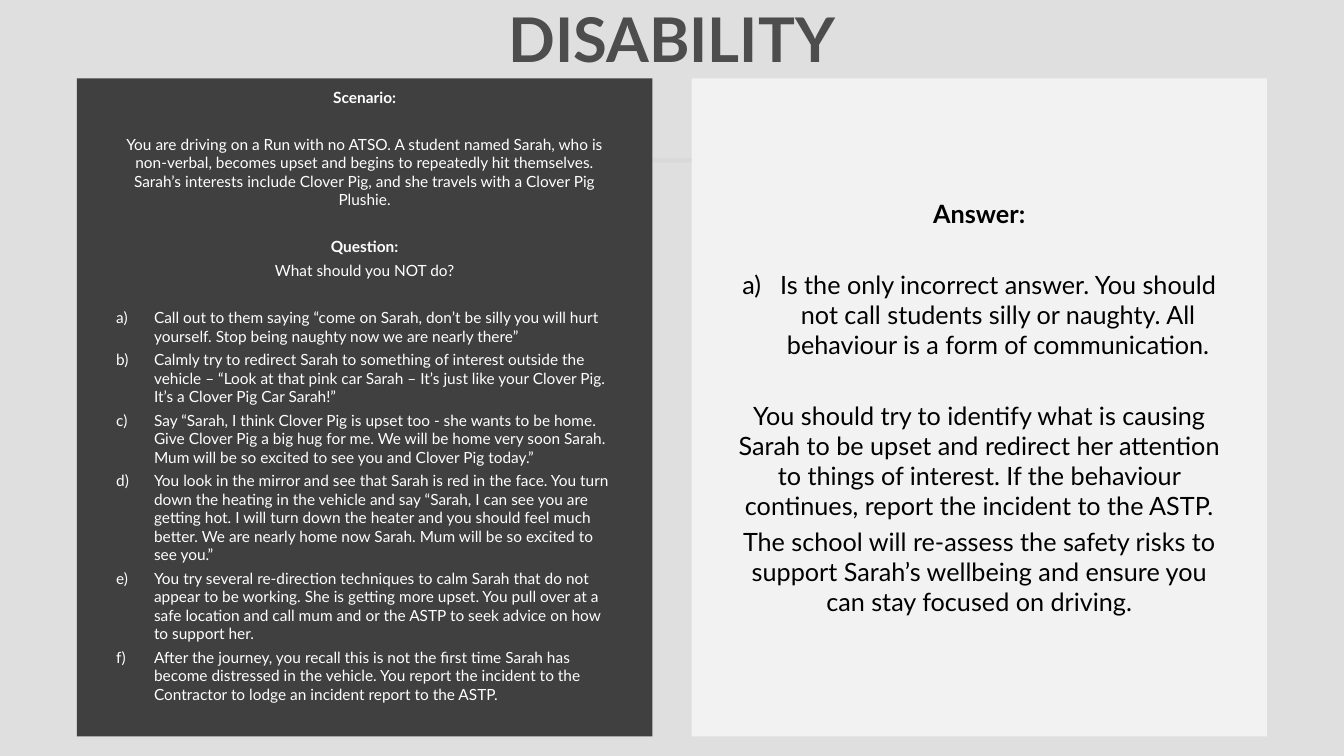
from dataclasses import dataclass

import pptx
import pptx.dml.color
import pptx.enum.shapes
import pptx.enum.text
import pptx.oxml.ns
import pptx.util
from lxml import etree

Pt = pptx.util.Pt
Align = pptx.enum.text.PP_ALIGN
Anchor = pptx.enum.text.MSO_ANCHOR


@dataclass(frozen=True)
class Theme:
    font: str = "Lato"
    background: str = "DFDFDF"
    rule: str = "D9D9D9"
    title: str = "4D4D4D"
    dark: str = "404040"
    light: str = "F2F2F2"
    on_dark: str = "FFFFFF"
    on_light: str = "000000"
    title_size: float = 44
    scenario_size: float = 11
    answer_size: float = 18
    line_height: float = 1.2
    space: float = 3.6
    list_indent: float = 27


THEME = Theme()
PANEL_TOP, PANEL_WIDTH, PANEL_HEIGHT = 56, 411, 470
SCENARIO_LEFT, ANSWER_LEFT = 55, 494

SCENARIO = (
    "You are driving on a Run with no ATSO. A student named Sarah, who is non-verbal, "
    "becomes upset and begins to repeatedly hit themselves. Sarah’s interests include "
    "Clover Pig, and she travels with a Clover Pig Plushie."
)
OPTIONS = [
    "Call out to them saying “come on Sarah, don’t be silly you will hurt yourself. "
    "Stop being naughty now we are nearly there”",
    "Calmly try to redirect Sarah to something of interest outside the vehicle – “Look at "
    "that pink car Sarah – It’s just like your Clover Pig. It’s a Clover Pig Car Sarah!”",
    "Say “Sarah, I think Clover Pig is upset too - she wants to be home. Give Clover Pig a "
    "big hug for me. We will be home very soon Sarah. Mum will be so excited to see you "
    "and Clover Pig today.”",
    "You look in the mirror and see that Sarah is red in the face. You turn down the "
    "heating in the vehicle and say “Sarah, I can see you are getting hot. I will turn "
    "down the heater and you should feel much better. We are nearly home now Sarah. Mum "
    "will be so excited to see you.”",
    "You try several re-direction techniques to calm Sarah that do not appear to be "
    "working. She is getting more upset. You pull over at a safe location and call mum "
    "and or the ASTP to seek advice on how to support her.",
    "After the journey, you recall this is not the first time Sarah has become distressed "
    "in the vehicle. You report the incident to the Contractor to lodge an incident "
    "report to the ASTP.",
]
ANSWER = (
    "Is the only incorrect answer. You should not call students silly or naughty. "
    "All behaviour is a form of communication."
)
ADVICE = (
    "You should try to identify what is causing Sarah to be upset and redirect her "
    "attention to things of interest. If the behaviour continues, report the incident "
    "to the ASTP."
)
FOLLOW_UP = (
    "The school will re-assess the safety risks to support Sarah’s wellbeing and ensure "
    "you can stay focused on driving."
)


def rgb(color):
    return pptx.dml.color.RGBColor.from_string(color)


def add_span(para, text, size, color, bold=False):
    span = para.add_run()
    span.text = text
    span.font.name = THEME.font
    span.font.size = Pt(size)
    span.font.bold = bold
    span.font.color.rgb = rgb(color)


def add_rectangle(page, left, top, width, height, fill):
    box = page.shapes.add_shape(
        pptx.enum.shapes.MSO_SHAPE.RECTANGLE, Pt(left), Pt(top), Pt(width), Pt(height)
    )
    box.shadow.inherit = False
    box.fill.solid()
    box.fill.fore_color.rgb = rgb(fill)
    box.line.fill.background()
    return box


def add_title(page, text):
    box = page.shapes.add_textbox(Pt(SCENARIO_LEFT), Pt(0), Pt(850), Pt(57))
    frame = box.text_frame
    frame.word_wrap = True
    frame.vertical_anchor = Anchor.BOTTOM
    para = frame.paragraphs[0]
    para.alignment = Align.CENTER
    para.line_spacing = Pt(48.8)
    add_span(para, text, THEME.title_size, THEME.title, bold=True)


def add_panel(page, left, fill, margin_top, margin_bottom):
    """Add a filled panel and return its text frame."""
    box = add_rectangle(page, left, PANEL_TOP, PANEL_WIDTH, PANEL_HEIGHT, fill)
    frame = box.text_frame
    frame.word_wrap = True
    frame.vertical_anchor = Anchor.MIDDLE
    frame.margin_left = frame.margin_right = Pt(28)
    frame.margin_top, frame.margin_bottom = Pt(margin_top), Pt(margin_bottom)
    return frame


def letter_paragraph(para):
    """Give a paragraph a hanging a), b), c) label."""
    properties = para._p.get_or_add_pPr()
    properties.set("marL", str(Pt(THEME.list_indent)))
    properties.set("indent", str(-Pt(THEME.list_indent)))
    label = etree.SubElement(properties, pptx.oxml.ns.qn("a:buAutoNum"))
    label.set("type", "alphaLcParenR")


def add_paragraph(frame, text, size, color, bold=False, gap=False,
                  lettered=False, align=Align.CENTER):
    """Add a paragraph; gap leaves one line free above it."""
    first = frame.paragraphs[0]
    para = frame.add_paragraph() if first.runs else first
    para.alignment = align
    free_line = size * THEME.line_height + THEME.space if gap else 0
    para.space_before = Pt(THEME.space + free_line)
    if lettered:
        letter_paragraph(para)
    add_span(para, text, size, color, bold)


def add_scenario(page):
    frame = add_panel(page, SCENARIO_LEFT, THEME.dark, 7, 24)
    style = (THEME.scenario_size, THEME.on_dark)
    add_paragraph(frame, "Scenario:", *style, bold=True)
    add_paragraph(frame, SCENARIO, *style, gap=True)
    add_paragraph(frame, "Question:", *style, bold=True, gap=True)
    add_paragraph(frame, "What should you NOT do?", *style)
    for index, option in enumerate(OPTIONS):
        add_paragraph(frame, option, *style, gap=index == 0, lettered=True, align=Align.LEFT)


def add_answer(page):
    frame = add_panel(page, ANSWER_LEFT, THEME.light, 28, 28)
    style = (THEME.answer_size, THEME.on_light)
    add_paragraph(frame, "Answer:", *style, bold=True)
    add_paragraph(frame, ANSWER, *style, gap=True, lettered=True)
    add_paragraph(frame, ADVICE, *style, gap=True)
    add_paragraph(frame, FOLLOW_UP, *style)


def main():
    deck = pptx.Presentation()
    deck.slide_width, deck.slide_height = Pt(960), Pt(540)
    page = deck.slides.add_slide(deck.slide_layouts[6])
    page.background.fill.solid()
    page.background.fill.fore_color.rgb = rgb(THEME.background)
    add_rectangle(page, 458, 113, 42, 3, THEME.rule)
    add_title(page, "DISABILITY")
    add_scenario(page)
    add_answer(page)
    deck.save("out.pptx")


if __name__ == "__main__":
    main()
